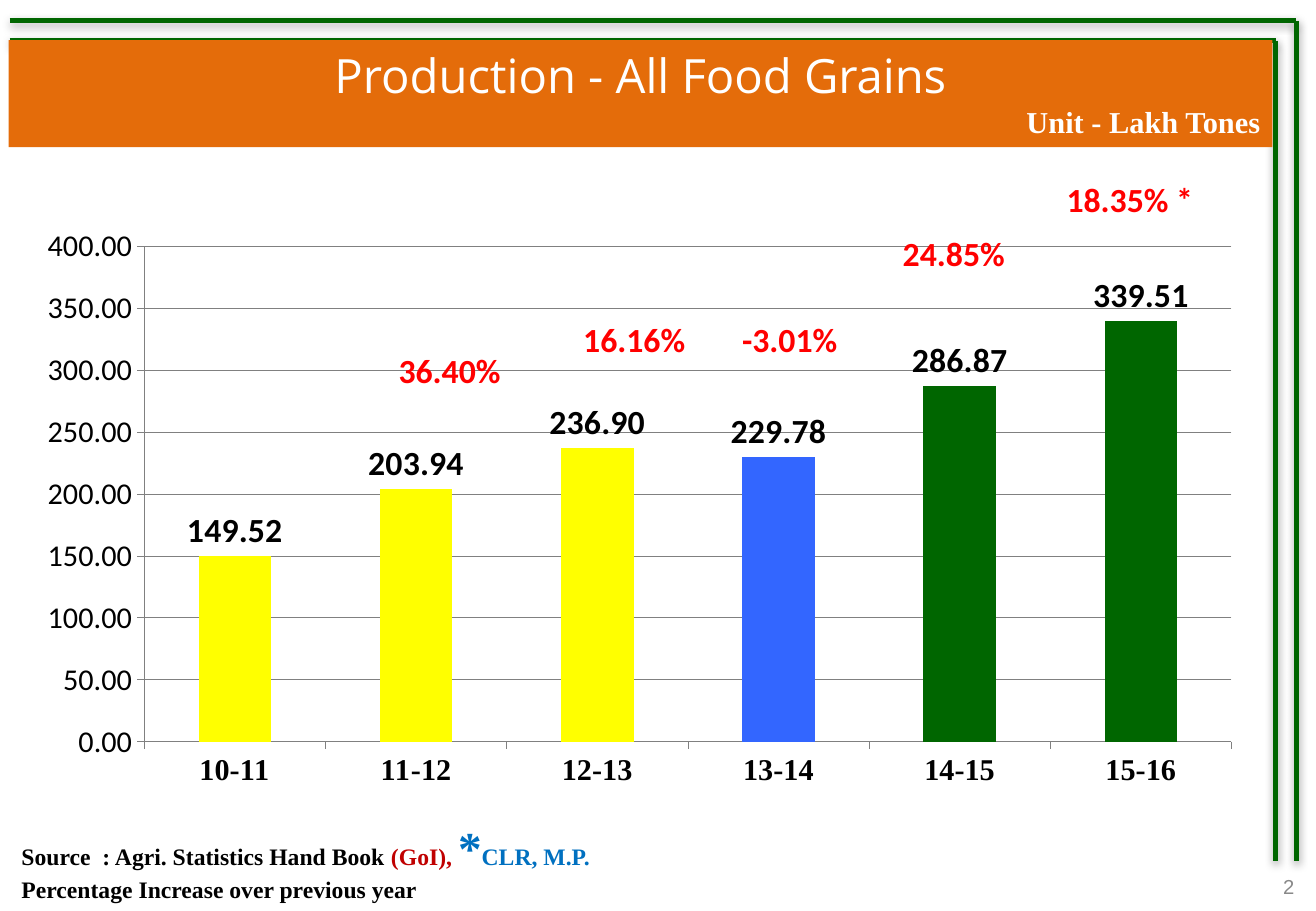
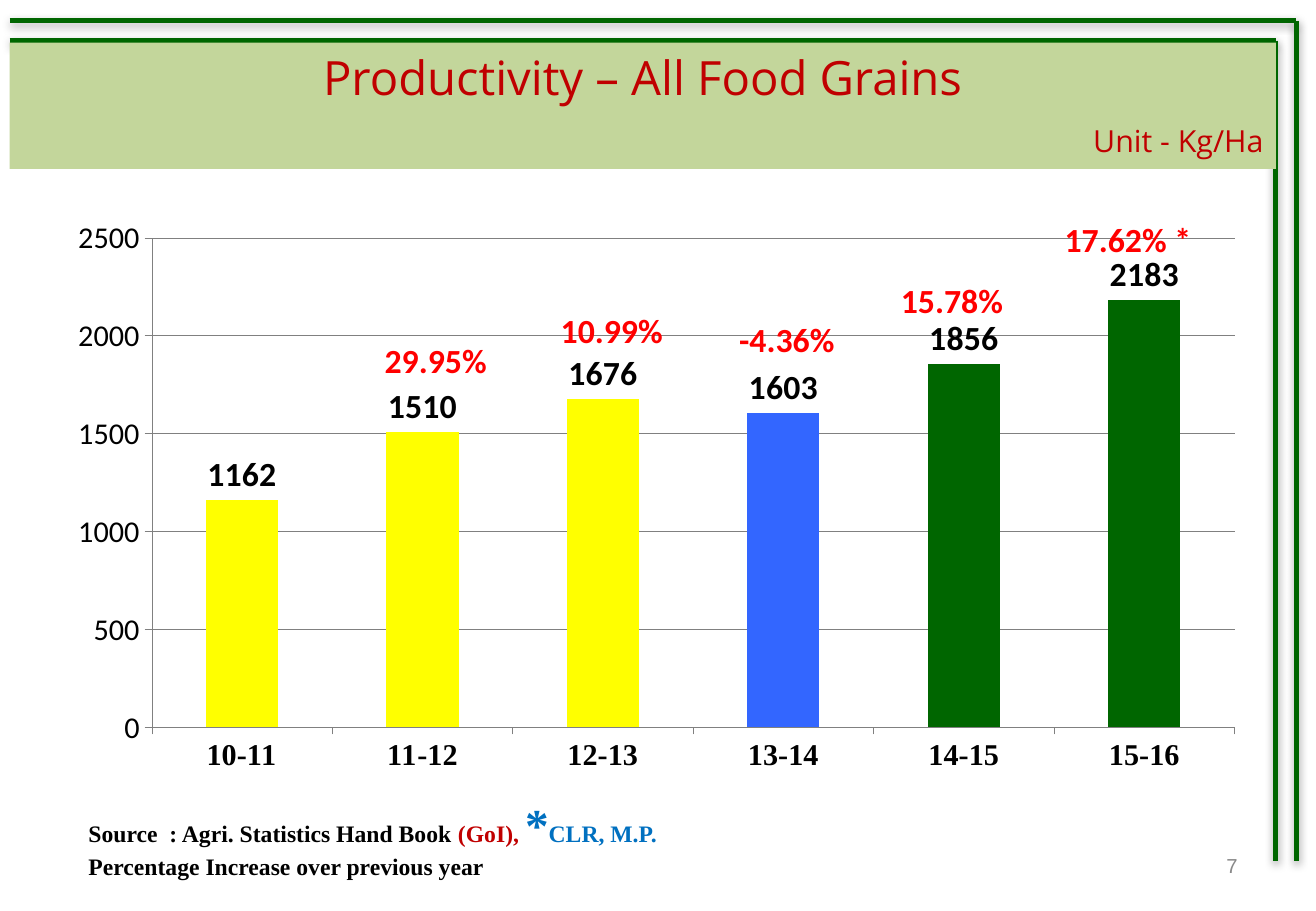
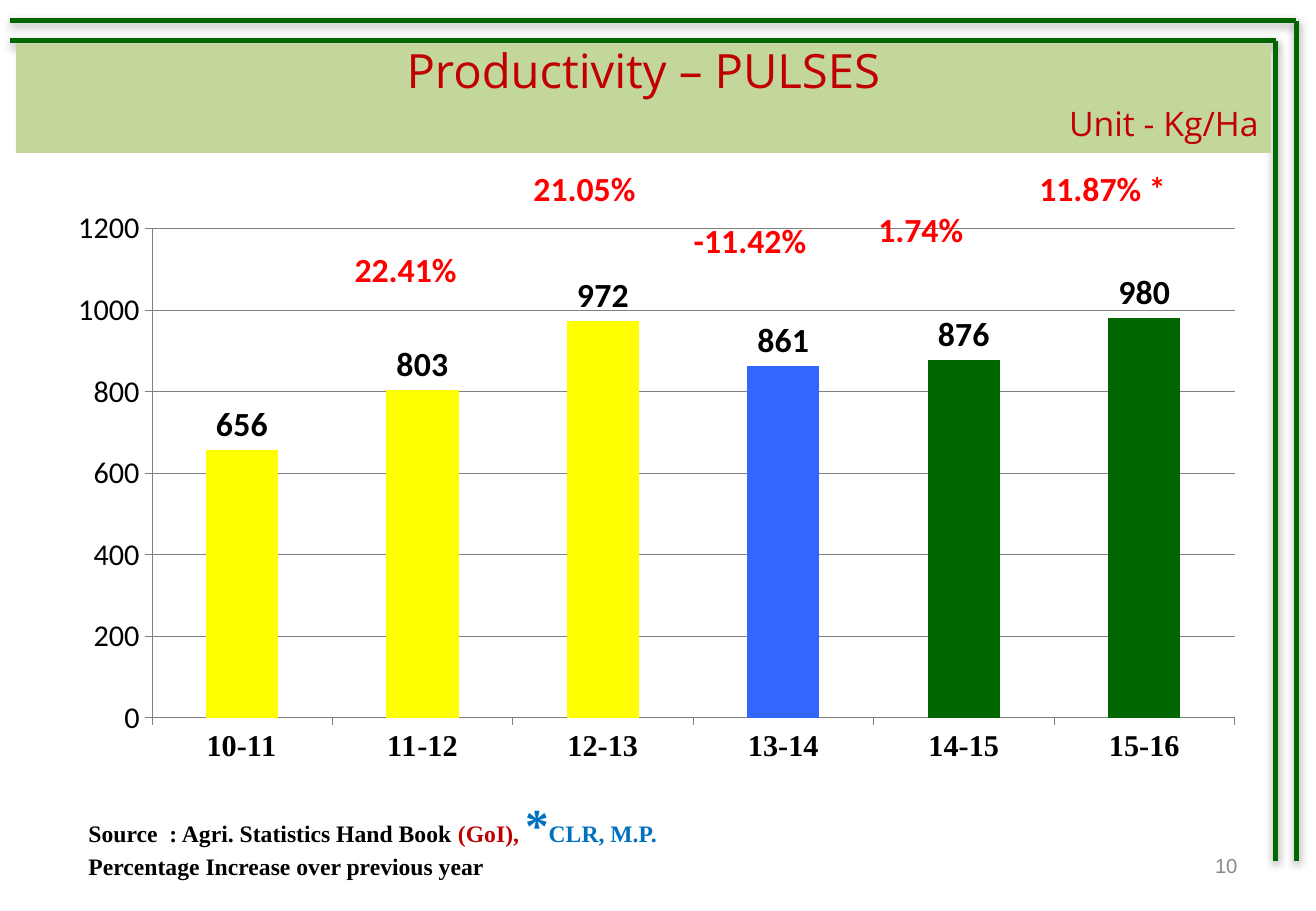
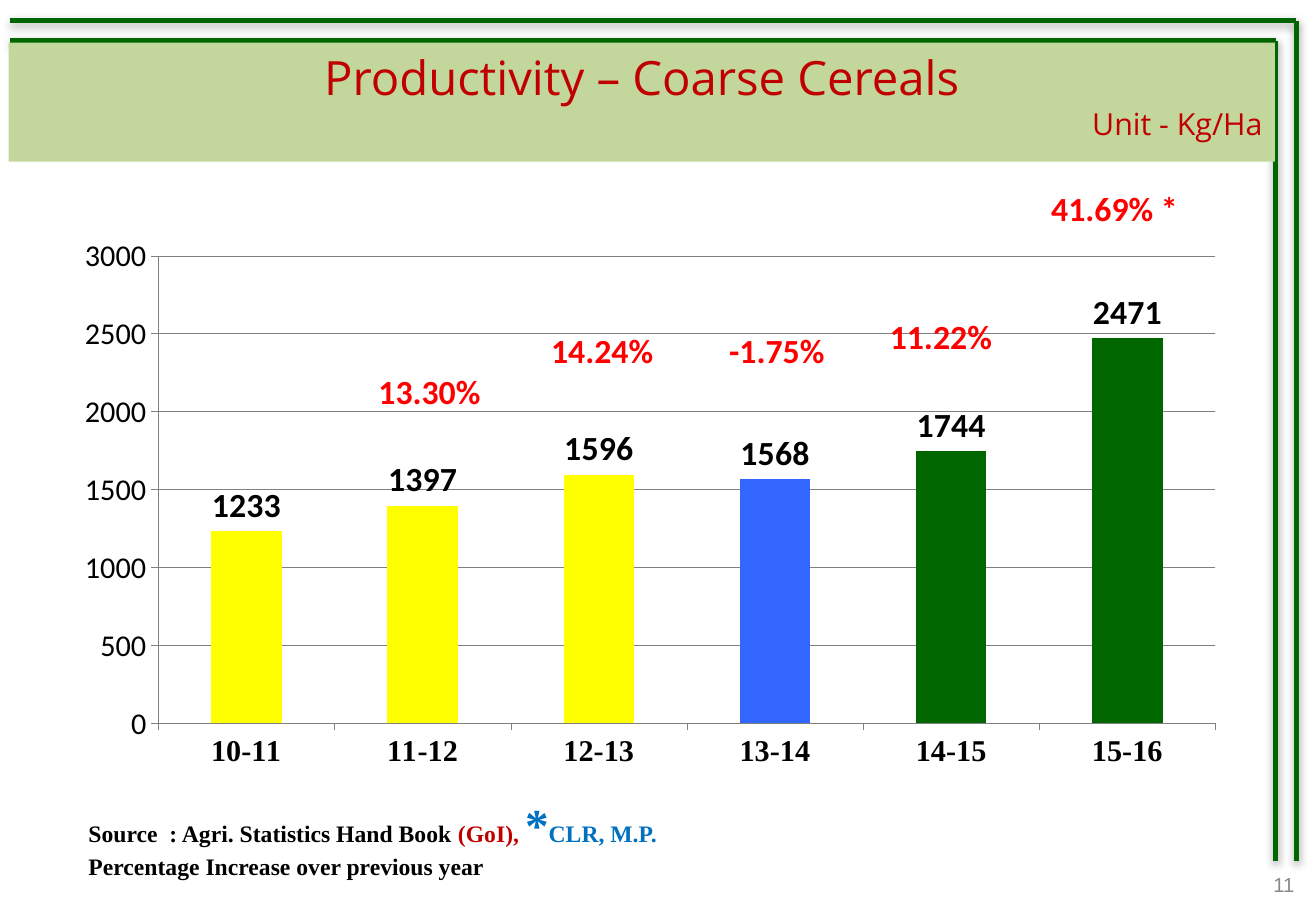
from dataclasses import dataclass
from typing import NamedTuple, Optional

from pptx import Presentation
from pptx.chart.data import CategoryChartData
from pptx.dml.color import RGBColor
from pptx.enum.chart import XL_CHART_TYPE as ChartType
from pptx.enum.chart import XL_LABEL_POSITION as LabelPos
from pptx.enum.chart import XL_TICK_MARK as Tick
from pptx.enum.shapes import MSO_CONNECTOR as Connector
from pptx.enum.text import MSO_ANCHOR as Anchor
from pptx.enum.text import MSO_AUTO_SIZE as AutoSize
from pptx.enum.text import PP_ALIGN as Align
from pptx.oxml import parse_xml
from pptx.oxml.ns import nsdecls
from pptx.util import Cm, Pt

SERIF, SANS, TITLE_FONT, NUMBER_FONT = "Times New Roman", "Calibri", "Open Sans", "Arial"
BLACK, WHITE, GREY, AXIS_GREY = "000000", "FFFFFF", "898989", "808080"
GREEN, YELLOW, BLUE = "006600", "FFFF00", "3366FF"
ORANGE, PALE_GREEN = "E46C0A", "C3D69B"
DARK_RED, RED, NOTE_BLUE = "C00000", "FF0000", "0070C0"

YEARS = ("10-11", "11-12", "12-13", "13-14", "14-15", "15-16")
BAR_COLORS = (YELLOW, YELLOW, YELLOW, BLUE, GREEN, GREEN)
GROWTH_W, GROWTH_H = 3.6, 0.85
SHADOW = (
    f'<a:effectLst {nsdecls("a")}>'
    '<a:outerShdw blurRad="63500" dist="23000" dir="5400000" rotWithShape="0">'
    f'<a:srgbClr val="{BLACK}"><a:alpha val="35000"/></a:srgbClr>'
    "</a:outerShdw></a:effectLst>"
)


class Box(NamedTuple):
    x: float
    y: float
    w: float
    h: float


class Line(NamedTuple):
    x1: float
    y1: float
    x2: float
    y2: float


class Growth(NamedTuple):
    text: str
    center: float
    top: float


class Plot(NamedTuple):
    x: float = 0.099
    y: float = 0.089
    w: float = 0.885
    h: float = 0.784


@dataclass(frozen=True)
class CropSlide:
    title: str
    number: int
    banner: Box
    chart: Box
    values: tuple[float, ...]
    growth: tuple[Growth, ...]
    unit: str = "Unit - Kg/Ha"
    unit_size: float = 18
    unit_font: str = TITLE_FONT
    unit_bold: bool = False
    lead: str = ""
    spacing: Optional[float] = None
    fill: str = PALE_GREEN
    ink: str = DARK_RED
    number_at: tuple[float, float] = (19.69, 17.58)
    source_at: tuple[float, float] = (1.6, 16.51)
    number_format: str = "General"
    plot: Optional[Plot] = Plot()


FRAME = (
    Line(0.2, 0.43, 27.1, 0.43),
    Line(0.2, 0.85, 26.67, 0.85),
    Line(26.67, 0.85, 26.67, 18),
    Line(27.1, 0.43, 27.1, 18),
)

SLIDES = (
    CropSlide(
        "Production - All Food Grains", 2,
        Box(0.18, 0.84, 26.42, 2.24), Box(0.48, 4.52, 25.78, 12.17),
        (149.52, 203.94, 236.9, 229.78, 286.87, 339.51),
        (Growth("36.40%", 9.4, 7.19), Growth("16.16%", 13.26, 6.55),
         Growth("-3.01%", 16.51, 6.55), Growth("24.85%", 19.94, 4.75),
         Growth("18.35% *", 23.62, 3.61)),
        unit="Unit - Lakh Tones", unit_font=SERIF, unit_bold=True,
        fill=ORANGE, ink=WHITE, number_at=(20.88, 18.03),
        source_at=(0.2, 16.99), number_format="0.00", plot=None,
    ),
    CropSlide(
        "Productivity – All Food Grains", 7,
        Box(0.2, 0.89, 26.47, 2.64), Box(0.64, 3.81, 25.58, 13.06),
        (1162, 1510, 1676, 1603, 1856, 2183),
        (Growth("29.95%", 9.11, 6.99), Growth("10.99%", 12.79, 6.35),
         Growth("-4.36%", 16.45, 6.55), Growth("15.78%", 19.9, 5.72),
         Growth("17.62% *", 23.58, 4.45)),
        lead=" ",
    ),
    CropSlide(
        "Productivity – PULSES", 10,
        Box(0.33, 0.91, 26.24, 2.29), Box(0.64, 3.61, 25.58, 13.06),
        (656, 803, 972, 861, 876, 980),
        (Growth("22.41%", 8.48, 5.08), Growth("21.05%", 12.22, 3.38),
         Growth("-11.42%", 15.68, 4.47), Growth("1.74%", 19.25, 4.24),
         Growth("11.87% *", 23.05, 3.38)),
        unit_size=20, lead=" ", spacing=0.85,
    ),
    CropSlide(
        "Productivity – Coarse Cereals", 11,
        Box(0.18, 0.89, 26.47, 2.49), Box(0.84, 4.24, 24.97, 12.47),
        (1233, 1397, 1596, 1568, 1744, 2471),
        (Growth("13.30%", 8.98, 7.62), Growth("14.24%", 12.59, 6.78),
         Growth("-1.75%", 16.24, 6.78), Growth("11.22%", 19.67, 6.48),
         Growth("41.69% *", 23.3, 3.81)),
        number_at=(20.88, 17.98),
    ),
)


def rgb(color: str) -> RGBColor:
    return RGBColor.from_string(color)


def set_font(font, *, size: float, name: str, color: str = BLACK, bold: bool = False) -> None:
    font.size, font.name, font.bold = Pt(size), name, bold
    font.color.rgb = rgb(color)


def write(p, text: str, *, align=None, **font) -> None:
    r = p.add_run()
    r.text = text
    set_font(r.font, **font)
    if align is not None:
        p.alignment = align


def cm(box: Box) -> list:
    return [Cm(v) for v in box]


def add_text_box(s, box: Box):
    tf = s.shapes.add_textbox(*cm(box)).text_frame
    tf.word_wrap = True
    return tf


def add_frame(s) -> None:
    for line in FRAME:
        c = s.shapes.add_connector(Connector.STRAIGHT, *[Cm(v) for v in line])
        c.line.color.rgb = rgb(GREEN)
        c.line.width = Pt(3)
        c._element.spPr.append(parse_xml(SHADOW))


def add_banner(s, crop: CropSlide) -> None:
    sp = s.shapes.title
    sp.left, sp.top, sp.width, sp.height = cm(crop.banner)
    sp.fill.solid()
    sp.fill.fore_color.rgb = rgb(crop.fill)
    tf = sp.text_frame
    tf.vertical_anchor = Anchor.TOP
    tf.auto_size = AutoSize.NONE
    heading, unit = tf.paragraphs[0], tf.add_paragraph()
    heading.line_spacing = unit.line_spacing = crop.spacing
    write(heading, crop.title, align=Align.CENTER, size=28, name=TITLE_FONT, color=crop.ink)
    if crop.lead:
        write(unit, crop.lead, size=28, name=TITLE_FONT, color=crop.ink)
    write(unit, crop.unit, align=Align.RIGHT, size=crop.unit_size,
          name=crop.unit_font, color=crop.ink, bold=crop.unit_bold)
    s.shapes._spTree.append(sp._element)


def style_line(line) -> None:
    line.color.rgb = rgb(AXIS_GREY)
    line.width = Pt(0.25)


def place_plot(chart, plot: Plot) -> None:
    area = chart._chartSpace.chart.plotArea
    for old in area.xpath("c:layout"):
        area.remove(old)
    sizes = "".join(f'<c:{k} val="{v}"/>' for k, v in plot._asdict().items())
    area.insert(0, parse_xml(
        f'<c:layout {nsdecls("c")}><c:manualLayout><c:layoutTarget val="inner"/>'
        f'<c:xMode val="edge"/><c:yMode val="edge"/>{sizes}'
        "</c:manualLayout></c:layout>"
    ))


def add_bar_chart(s, crop: CropSlide) -> None:
    data = CategoryChartData(number_format=crop.number_format)
    data.categories = YEARS
    data.add_series("Series 1", crop.values)
    chart = s.shapes.add_chart(ChartType.COLUMN_CLUSTERED, *cm(crop.chart), data).chart
    chart.has_legend = chart.has_title = False
    set_font(chart.font, size=17.9, name=SANS)
    for axis, name in ((chart.category_axis, SERIF), (chart.value_axis, SANS)):
        axis.major_tick_mark, axis.minor_tick_mark = Tick.OUTSIDE, Tick.NONE
        style_line(axis.format.line)
        set_font(axis.tick_labels.font, size=17.9, name=name, bold=name == SERIF)
    chart.value_axis.has_major_gridlines = True
    style_line(chart.value_axis.major_gridlines.format.line)
    chart.value_axis.tick_labels.number_format = crop.number_format
    chart.value_axis.tick_labels.number_format_is_linked = False
    bars = chart.plots[0]
    bars.gap_width, bars.vary_by_categories = 150, False
    bars.has_data_labels = True
    labels = bars.data_labels
    labels.show_value = True
    labels.position = LabelPos.OUTSIDE_END
    labels.number_format = crop.number_format
    labels.number_format_is_linked = False
    set_font(labels.font, size=20, name=SANS, bold=True)
    for i, color in enumerate(BAR_COLORS):
        fill = bars.series[0].points[i].format.fill
        fill.solid()
        fill.fore_color.rgb = rgb(color)
    if crop.plot:
        place_plot(chart, crop.plot)


def add_growth(s, growth: Growth) -> None:
    box = Box(growth.center - GROWTH_W / 2, growth.top, GROWTH_W, GROWTH_H)
    write(add_text_box(s, box).paragraphs[0], growth.text, align=Align.CENTER,
          size=20, name=SANS, color=RED, bold=True)


def add_source(s, at: tuple[float, float]) -> None:
    tf = add_text_box(s, Box(*at, 15.6, 2.06))
    p = tf.paragraphs[0]
    for text, size, color in (
        ("Source  : Agri. Statistics Hand Book ", 14, BLACK),
        ("(GoI), ", 14, DARK_RED),
        ("*", 28, NOTE_BLUE),
        ("CLR, M.P.", 14, NOTE_BLUE),
    ):
        write(p, text, size=size, name=SERIF, color=color, bold=True)
    write(tf.add_paragraph(), "Percentage Increase over previous year",
          size=14, name=SERIF, bold=True)


def add_number(s, crop: CropSlide) -> None:
    tf = add_text_box(s, Box(*crop.number_at, 6.43, 1.02))
    tf.vertical_anchor = Anchor.MIDDLE
    write(tf.paragraphs[0], str(crop.number), align=Align.RIGHT,
          size=12, name=NUMBER_FONT, color=GREY)


def add_crop_slide(prs, crop: CropSlide) -> None:
    s = prs.slides.add_slide(prs.slide_layouts[5])
    add_frame(s)
    add_banner(s, crop)
    add_bar_chart(s, crop)
    add_number(s, crop)
    add_source(s, crop.source_at)
    for growth in crop.growth:
        add_growth(s, growth)


def main() -> None:
    prs = Presentation()
    prs.slide_width, prs.slide_height = Cm(27.51), Cm(19.05)
    for crop in SLIDES:
        add_crop_slide(prs, crop)
    prs.save("out.pptx")


if __name__ == "__main__":
    main()
